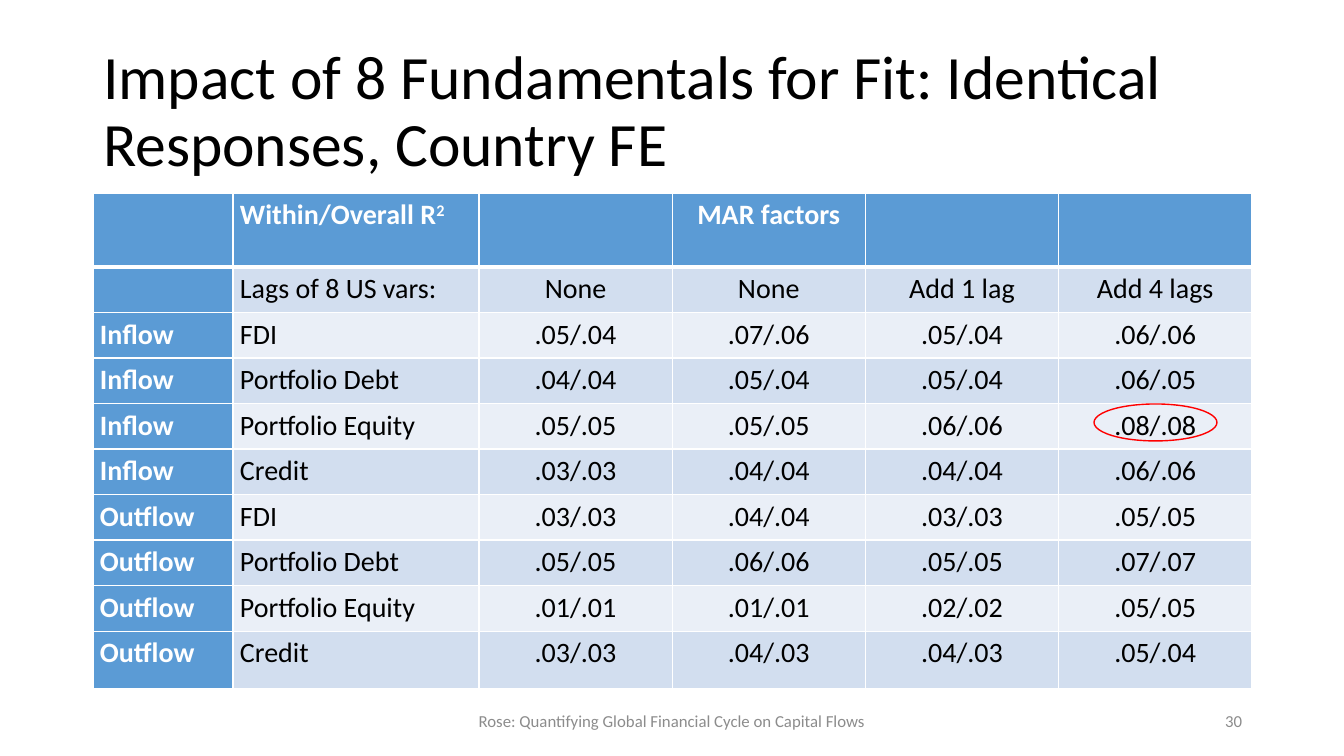
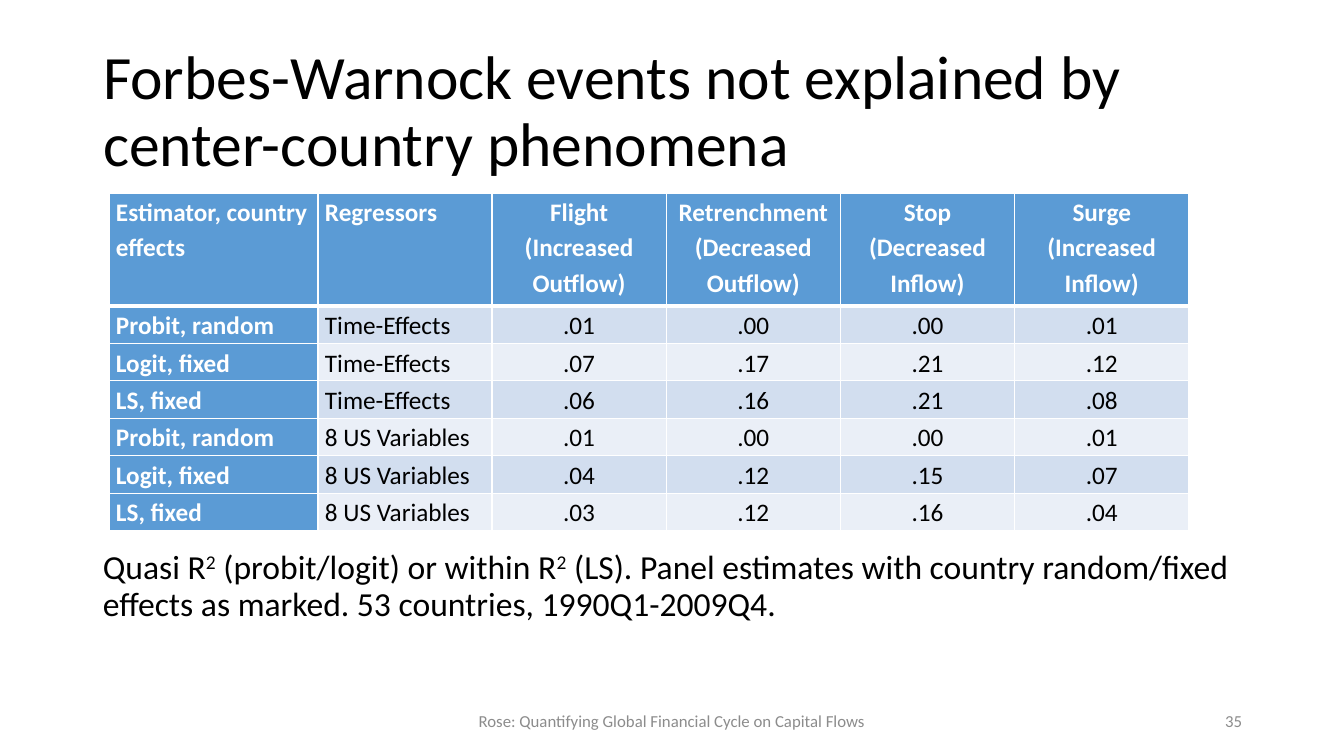
from dataclasses import dataclass

from lxml import etree
from pptx import Presentation
from pptx import util as u
from pptx.dml.color import RGBColor
from pptx.enum import shapes, text
from pptx.oxml import ns

FONT = "Calibri"
BLACK = RGBColor(0x00, 0x00, 0x00)
WHITE = RGBColor(0xFF, 0xFF, 0xFF)
GREY = RGBColor(0x8C, 0x8C, 0x8C)
RED = RGBColor(0xFF, 0x00, 0x00)
BLUE = RGBColor(0x5B, 0x9B, 0xD5)
BANDS = (RGBColor(0xD2, 0xDE, 0xEF), RGBColor(0xEA, 0xEF, 0xF7))

LEFT = text.PP_ALIGN.LEFT
CENTER = text.PP_ALIGN.CENTER
RIGHT = text.PP_ALIGN.RIGHT
MIDDLE = text.MSO_ANCHOR.MIDDLE
TOP = text.MSO_ANCHOR.TOP

FOOTER = "Rose: Quantifying Global Financial Cycle on Capital Flows"


def px(n: int) -> u.Emu:
    return u.Emu(round(n * 914400 / 100.8))


@dataclass(frozen=True)
class Box:
    left: int
    top: int
    width: int
    height: int

    def emu(self) -> tuple[u.Emu, ...]:
        return tuple(px(n) for n in (self.left, self.top, self.width, self.height))


@dataclass(frozen=True)
class Style:
    size: int
    color: RGBColor = BLACK
    align: text.PP_ALIGN = LEFT
    bold: bool = False
    spacing: float = 1.0


@dataclass(frozen=True)
class Grid:
    left: int
    top: int
    label: int
    second: int
    values: int
    head: int
    body: int
    extra: int
    size: int
    rows: tuple[tuple[str, ...], ...]


TITLE = Box(93, 40, 1159, 146)
FOOT = Box(445, 701, 454, 40)
NUMBER = Box(950, 701, 302, 40)
NOTE = Box(93, 546, 1159, 84)
RING = Box(1094, 404, 123, 37)

FIT = Grid(93, 193, 140, 246, 773, 74, 410, 12, 20, (
    ("", "Within/Overall R^2^", "", "MAR factors", "", ""),
    ("", "Lags of 8 US vars:", "None", "None", "Add 1 lag", "Add 4 lags"),
    ("Inflow", "FDI", ".05/.04", ".07/.06", ".05/.04", ".06/.06"),
    ("Inflow", "Portfolio Debt", ".04/.04", ".05/.04", ".05/.04", ".06/.05"),
    ("Inflow", "Portfolio Equity", ".05/.05", ".05/.05", ".06/.06", ".08/.08"),
    ("Inflow", "Credit", ".03/.03", ".04/.04", ".04/.04", ".06/.06"),
    ("Outflow", "FDI", ".03/.03", ".04/.04", ".03/.03", ".05/.05"),
    ("Outflow", "Portfolio Debt", ".05/.05", ".06/.06", ".05/.05", ".07/.07"),
    ("Outflow", "Portfolio Equity", ".01/.01", ".01/.01", ".02/.02", ".05/.05"),
    ("Outflow", "Credit", ".03/.03", ".04/.03", ".04/.03", ".05/.04"),
))
EVENTS = Grid(109, 193, 209, 174, 697, 113, 225, 0, 18, (
    ("Estimator, country effects", "Regressors", "Flight (Increased Outflow)",
     "Retrenchment (Decreased Outflow)", "Stop (Decreased Inflow)",
     "Surge (Increased Inflow)"),
    ("Probit, random", "Time-Effects", ".01", ".00", ".00", ".01"),
    ("Logit, fixed", "Time-Effects", ".07", ".17", ".21", ".12"),
    ("LS, fixed", "Time-Effects", ".06", ".16", ".21", ".08"),
    ("Probit, random", "8 US Variables", ".01", ".00", ".00", ".01"),
    ("Logit, fixed", "8 US Variables", ".04", ".12", ".15", ".07"),
    ("LS, fixed", "8 US Variables", ".03", ".12", ".16", ".04"),
))
REMARK = ("Quasi R^2^ (probit/logit) or within R^2^ (LS). Panel estimates with "
          "country random/fixed effects as marked. 53 countries, 1990Q1-2009Q4.")


def write(para, words: str, style: Style) -> None:
    para.alignment = style.align
    para.line_spacing = style.spacing
    para.font.name = FONT
    para.font.size = u.Pt(style.size)
    para.font.bold = style.bold
    para.font.color.rgb = style.color
    for i, part in enumerate(words.split("^")):
        if part:
            run = para.add_run()
            run.text = part
            if i % 2:
                run._r.get_or_add_rPr().set("baseline", "30000")


def add_text(slide, box: Box, words: str, style: Style, anchor=MIDDLE) -> None:
    frame = slide.shapes.add_textbox(*box.emu()).text_frame
    frame.word_wrap = True
    frame.vertical_anchor = anchor
    write(frame.paragraphs[0], words, style)


def add_page(deck, title: str, number: int):
    slide = deck.slides.add_slide(deck.slide_layouts[5])
    shape = slide.shapes.title
    shape.left, shape.top, shape.width, shape.height = TITLE.emu()
    frame = shape.text_frame
    frame.auto_size = text.MSO_AUTO_SIZE.NONE
    frame.word_wrap = True
    frame.vertical_anchor = MIDDLE
    write(frame.paragraphs[0], title, Style(44, spacing=0.9))
    add_text(slide, FOOT, FOOTER, Style(12, GREY, CENTER))
    add_text(slide, NUMBER, str(number), Style(12, GREY, RIGHT))
    return slide


def add_edges(cell, row: int) -> None:
    props = cell._tc.get_or_add_tcPr()
    wide = {"lnB": row == 0, "lnT": row == 1}
    for tag in ("lnL", "lnR", "lnT", "lnB"):
        width = u.Pt(3 if wide.get(tag) else 1)
        line = etree.SubElement(props, ns.qn(f"a:{tag}"), w=str(width))
        fill = etree.SubElement(line, ns.qn("a:solidFill"))
        etree.SubElement(fill, ns.qn("a:srgbClr"), val=str(WHITE))


def add_cell(cell, words: str, row: int, col: int, size: int) -> None:
    head = row == 0 or col == 0
    cell.margin_left = cell.margin_right = px(7)
    cell.margin_top = cell.margin_bottom = 0
    add_edges(cell, row)
    cell.fill.solid()
    cell.fill.fore_color.rgb = BLUE if head else BANDS[(row - 1) % 2]
    style = Style(size, WHITE if head else BLACK,
                  CENTER if col > 1 else LEFT, head, 1.15)
    write(cell.text_frame.paragraphs[0], words, style)


def add_grid(slide, grid: Grid) -> None:
    count, wide = len(grid.rows), len(grid.rows[0])
    box = Box(grid.left, grid.top, grid.label + grid.second + grid.values,
              grid.head + grid.body + grid.extra)
    table = slide.shapes.add_table(count, wide, *box.emu()).table
    table.first_col = True
    for col in table.columns:
        col.width = px(grid.values) // (wide - 2)
    table.columns[0].width = px(grid.label)
    table.columns[1].width = px(grid.second)
    for row in table.rows:
        row.height = px(grid.body) // (count - 1)
    table.rows[0].height = px(grid.head)
    table.rows[count - 1].height += px(grid.extra)
    for r, line in enumerate(grid.rows):
        for c, words in enumerate(line):
            add_cell(table.cell(r, c), words, r, c, grid.size)


def add_ring(slide, box: Box) -> None:
    ring = slide.shapes.add_shape(shapes.MSO_SHAPE.OVAL, *box.emu())
    ring.shadow.inherit = False
    ring.fill.background()
    ring.line.color.rgb = RED
    ring.line.width = u.Pt(1)


def main() -> None:
    deck = Presentation()
    deck.slide_width, deck.slide_height = px(1344), px(756)

    fit = add_page(deck, "Impact of 8 Fundamentals for Fit: Identical "
                         "Responses, Country FE", 30)
    add_grid(fit, FIT)
    add_ring(fit, RING)

    events = add_page(deck, "Forbes-Warnock events not explained by "
                            "center-country phenomena", 35)
    add_text(events, NOTE, REMARK, Style(24, spacing=0.9), TOP)
    add_grid(events, EVENTS)

    deck.save("out.pptx")


if __name__ == "__main__":
    main()
